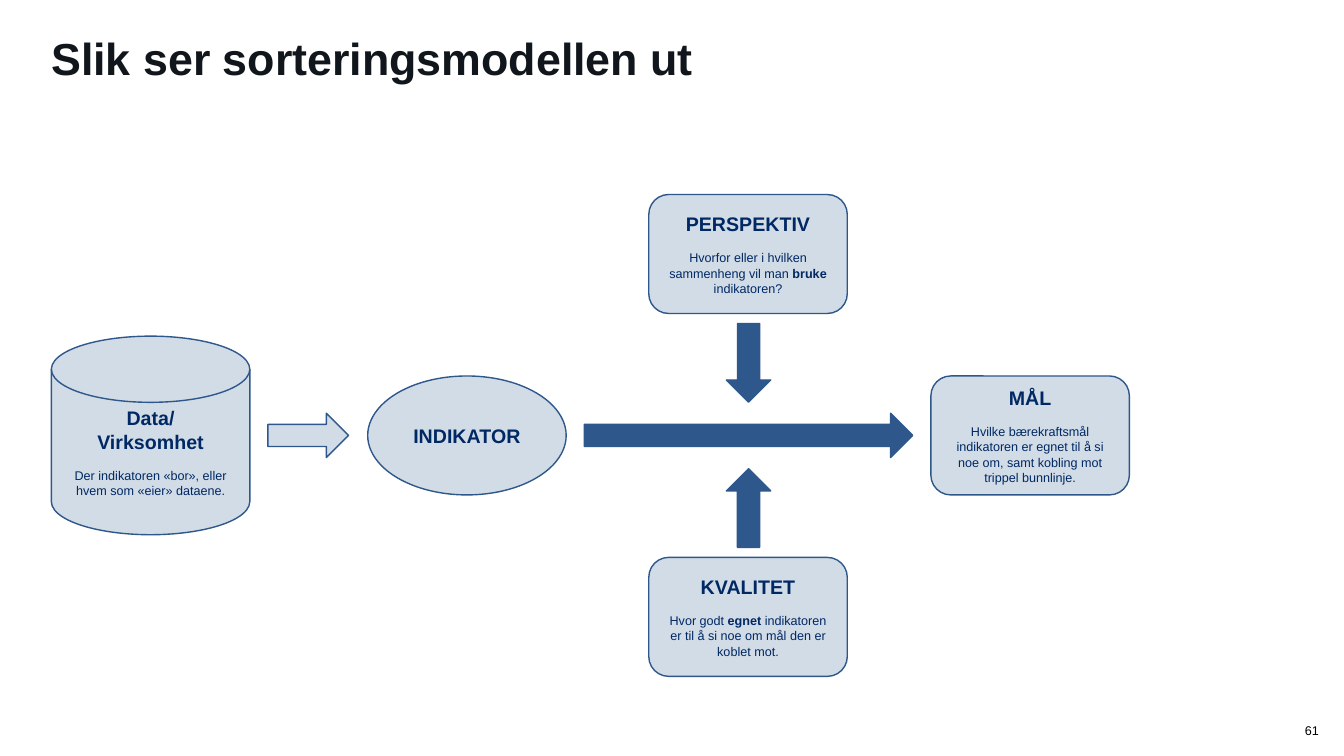
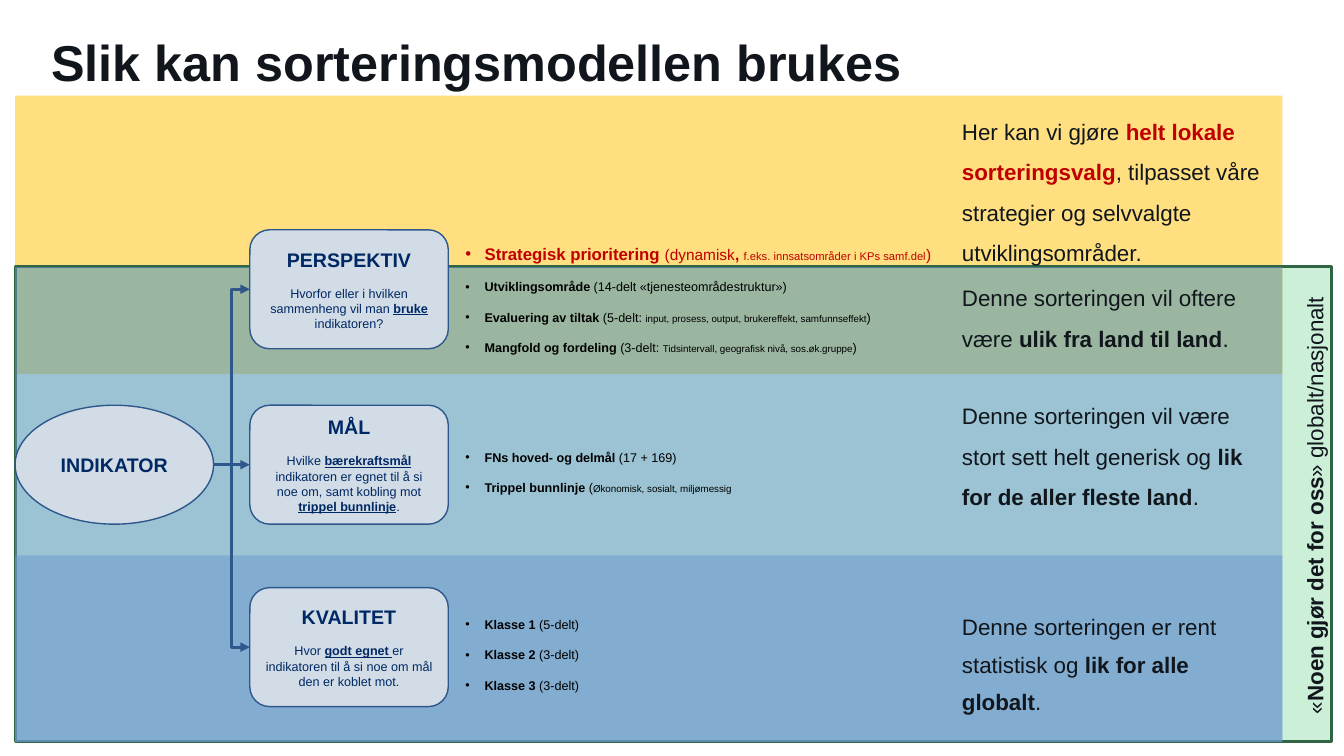
import pptx
import pptx.util
import pptx.dml.color
import pptx.enum.shapes
import pptx.enum.text
import pptx.oxml.ns
from lxml import etree

Inches = pptx.util.Inches
Pt = pptx.util.Pt
RGB = pptx.dml.color.RGBColor.from_string
Kind = pptx.enum.shapes.MSO_SHAPE
Link = pptx.enum.shapes.MSO_CONNECTOR
Align = pptx.enum.text.PP_ALIGN
Anchor = pptx.enum.text.MSO_ANCHOR
qn = pptx.oxml.ns.qn

HUES = {
    "ink": "10161C", "black": "000000", "navy": "002864", "blue": "2E578B",
    "pale": "D2DCE6", "red": "C00000", "gold": "FFC000", "green": "00B140",
    "edge": "306544", "sky": "6C98CF",
}
WIDE, HIGH = 1.97, 1.18  # size of a model node


class Deck:
    """Holds the style and the current slide.

    A run is a string or a tuple (text, flags, size, hue); flags are b and u,
    and size and hue may be left out.
    """

    font = "Arial"

    def __init__(self):
        self.file = pptx.Presentation()
        self.file.slide_width = Inches(13.34)
        self.file.slide_height = Inches(7.5)
        self.slide = None

    def page(self):
        self.slide = self.file.slides.add_slide(self.file.slide_layouts[6])

    def title(self, text, size):
        self.text(0.51, 0.31, 11.02, 1, [[(text, "b")]], size, pad=False)

    def fill(self, para, runs, size, hue):
        for item in runs:
            parts = (item, "") if isinstance(item, str) else item
            text, flags, pts, tint = parts + (None,) * (4 - len(parts))
            run = para.add_run()
            run.text = text
            run.font.name = self.font
            run.font.size = Pt(pts or size)
            run.font.bold = "b" in flags
            run.font.underline = "u" in flags
            run.font.color.rgb = RGB(HUES[tint or hue])

    def text(self, x, y, w, h, paras, size, hue="ink", align=Align.LEFT,
             anchor=Anchor.TOP, pad=True, space=None, after=0,
             bullet=False, turn=0):
        box = self.slide.shapes.add_textbox(Inches(x), Inches(y), Inches(w), Inches(h))
        box.rotation = turn
        frame = box.text_frame
        frame.word_wrap = True
        frame.vertical_anchor = anchor
        if not pad:
            frame.margin_left = frame.margin_right = 0
            frame.margin_top = frame.margin_bottom = 0
        for i, runs in enumerate(paras):
            para = frame.add_paragraph() if i else frame.paragraphs[0]
            if bullet:
                self.bullet(para)
            para.alignment = align
            if space:
                para.line_spacing = space
            para.space_after = Pt(after)
            self.fill(para, runs, size, hue)

    def bullet(self, para):
        props = para._p.get_or_add_pPr()
        props.set("marL", str(Inches(0.19)))
        props.set("indent", str(-Inches(0.19)))
        etree.SubElement(props, qn("a:buFont")).set("typeface", self.font)
        etree.SubElement(props, qn("a:buChar")).set("char", "•")

    def shape(self, kind, x, y, w, h, hue, line=None, width=1, clear=None, turn=0):
        item = self.slide.shapes.add_shape(kind, Inches(x), Inches(y), Inches(w), Inches(h))
        item.shadow.inherit = False
        item.rotation = turn
        item.fill.solid()
        item.fill.fore_color.rgb = RGB(HUES[hue])
        if clear:
            color = item.element.spPr.find(".//" + qn("a:srgbClr"))
            etree.SubElement(color, qn("a:alpha")).set("val", str(clear * 1000))
        if line:
            item.line.color.rgb = RGB(HUES[line])
            item.line.width = Pt(width)
        else:
            item.line.fill.background()
        return item

    def node(self, x, mid, heads, body=(), kind=Kind.ROUNDED_RECTANGLE, high=HIGH):
        """Model part centred on the height mid, with heading and body text."""
        item = self.shape(kind, x, mid - high / 2, WIDE, high, "pale", "blue")
        frame = item.text_frame
        frame.word_wrap = True
        frame.vertical_anchor = Anchor.MIDDLE
        for i, head in enumerate(heads):
            para = frame.add_paragraph() if i else frame.paragraphs[0]
            para.alignment = Align.CENTER
            self.fill(para, [(head, "b")], 14, "navy")
        if body:
            para = frame.add_paragraph()
            para.alignment = Align.CENTER
            para.space_before = Pt(10.35)
            self.fill(para, body, 9, "navy")

    def arrow(self, x, mid, w, hue="blue", turn=0):
        self.shape(Kind.RIGHT_ARROW, x, mid - 0.22, w, 0.44, hue, "blue", turn=turn)

    def link(self, kind, x, y, end, stop):
        item = self.slide.shapes.add_connector(
            kind, Inches(x), Inches(y), Inches(end), Inches(stop))
        item.line.color.rgb = RGB(HUES["blue"])
        item.line.width = Pt(2.25)
        line = item.element.spPr.find(qn("a:ln"))
        etree.SubElement(line, qn("a:tailEnd")).set("type", "triangle")
        etree.SubElement(item.element.spPr, qn("a:effectLst"))


def model(deck):
    deck.page()
    deck.title("Slik ser sorteringsmodellen ut", 32)
    deck.text(12.09, 7.17, 1, 0.15, [["61"]], 9, "black", Align.RIGHT,
              Anchor.MIDDLE, pad=False)
    top, mid, low = 2.52, 4.32, 6.12

    # Nodes
    deck.node(0.51, mid, ["Data/", "Virksomhet"],
              ["Der indikatoren «bor», eller hvem som «eier» dataene."],
              Kind.FLOWCHART_MAGNETIC_DISK, WIDE)
    deck.node(3.65, mid, ["INDIKATOR"], kind=Kind.OVAL)
    deck.node(9.24, mid, ["MÅL"],
              ["Hvilke bærekraftsmål indikatoren er egnet til å si noe om, "
               "samt kobling mot trippel bunnlinje."])
    deck.node(6.44, low, ["KVALITET"],
              ["Hvor godt ", ("egnet", "b"),
               " indikatoren er til å si noe om mål den er koblet mot."])
    deck.node(6.44, top, ["PERSPEKTIV"],
              ["Hvorfor eller i hvilken sammenheng vil man ", ("bruke", "b"),
               " indikatoren?"])

    # Arrows
    deck.arrow(2.66, mid, 0.8, "pale")
    deck.arrow(5.8, mid, 3.26)
    for shift, turn in ((-0.72, 90), (0.72, 270)):
        deck.arrow(7.04, mid + shift, 0.78, turn=turn)


def usage(deck):
    deck.page()
    top, mid, low = 2.87, 4.61, 6.42

    # Bands, behind the title
    for y, w, h, hue, clear, line in (
            (0.95, 12.58, 2.76, "gold", 50, None),
            (2.64, 13.07, 4.72, "green", 20, "edge"),
            (2.65, 12.58, 4.71, "sky", 50, None),
            (5.51, 12.58, 1.85, "sky", 50, None)):
        deck.shape(Kind.RECTANGLE, 0.15, y, w, h, hue, line, 2.25, clear)
    deck.title("Slik kan sorteringsmodellen brukes", 36)

    # Nodes, links and lists, row by row
    deck.node(0.15, mid, ["INDIKATOR"], kind=Kind.OVAL)
    rows = (
        (top, Link.ELBOW, "PERSPEKTIV",
         ["Hvorfor eller i hvilken sammenheng vil man ", ("bruke", "bu"),
          " indikatoren?"],
         [[("Strategisk prioritering ", "b", 12, "red"),
           ("(dynamisk", "", 11, "red"), (", ", "b", 11, "red"),
           ("f.eks. innsatsområder i KPs samf.del", "", 8, "red"),
           (")", "", 11, "red")],
          [("Utviklingsområde", "b"), " (14-delt «tjenesteområdestruktur»)"],
          [("Evaluering av tiltak ", "b"), "(5-delt: ",
           ("input, prosess, output, brukereffekt, samfunnseffekt", "", 7), ")"],
          [("Mangfold og fordeling ", "b"), "(3-delt: ",
           ("Tidsintervall, geografisk nivå, sos.øk.gruppe", "", 7), ")"]]),
        (mid, Link.STRAIGHT, "MÅL",
         ["Hvilke ", ("bærekraftsmål", "bu"),
          " indikatoren er egnet til å si noe om, samt kobling mot ",
          ("trippel bunnlinje", "bu"), "."],
         [[("FNs hoved- og delmål ", "b"), "(17 + 169)"],
          [("Trippel bunnlinje ", "b"), "(",
           ("Økonomisk, sosialt, miljømessig", "", 7)]]),
        (low, Link.ELBOW, "KVALITET",
         ["Hvor ", ("godt egnet ", "bu"),
          "er indikatoren til å si noe om mål den er koblet mot."],
         [[(f"Klasse {i}", "b"), f" ({n}-delt)"]
          for i, n in ((1, 5), (2, 3), (3, 3))]),
    )
    for y, kind, head, body, items in rows:
        deck.node(2.48, y, [head], body)
        deck.link(kind, 2.12, mid, 2.48, y)
        deck.text(4.62, y - HIGH / 2, 4.8, HIGH, items, 9, "black",
                  anchor=Anchor.MIDDLE, pad=False, space=2.0, bullet=True)

    # Remarks on the right
    for y, h, space, runs in (
            (0.99, 1.6, 1.5,
             ["Her kan vi gjøre ", ("helt lokale sorteringsvalg", "b", 16, "red"),
              ", tilpasset våre strategier og selvvalgte utviklingsområder."]),
            (2.64, 0.96, 1.5,
             ["Denne sorteringen vil oftere være ",
              ("ulik fra land til land", "b"), "."]),
            (3.81, 1.66, 1.5,
             ["Denne sorteringen vil være stort sett helt generisk og ",
              ("lik for de aller fleste land", "b"), "."]),
            (5.93, 1.28, 1.4,
             ["Denne sorteringen er rent statistisk og ",
              ("lik for alle globalt", "b"), "."])):
        deck.text(9.45, y, 3.2, h, [runs], 16, space=space, after=12)
    deck.text(10.61, 4.77, 4.73, 0.49,
              [["«", ("Noen gjør det for oss", "b"), "» globalt/nasjonalt"]],
              16, align=Align.CENTER, space=1.5, after=12, turn=270)


def main():
    deck = Deck()
    model(deck)
    usage(deck)
    deck.file.save("out.pptx")


if __name__ == "__main__":
    main()
